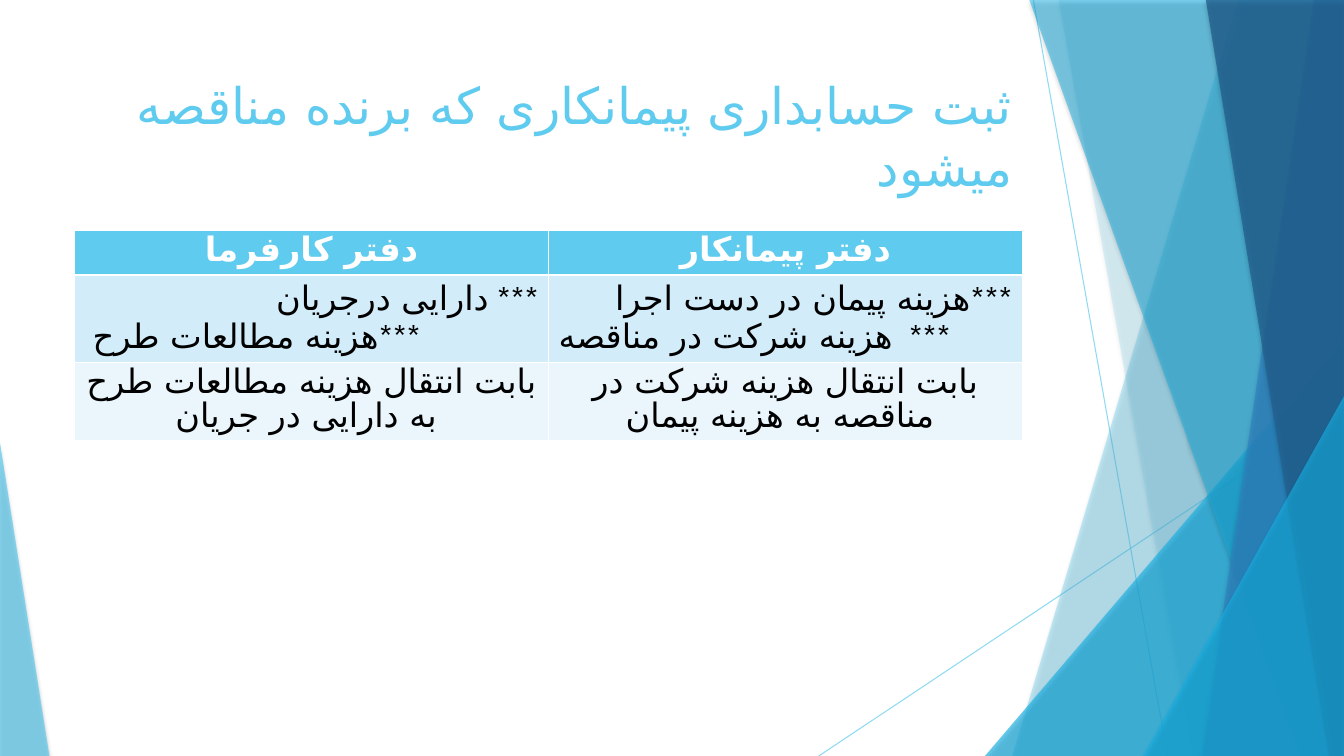
from lxml import etree
from pptx import Presentation
from pptx import util as u
from pptx.dml.color import RGBColor
from pptx.enum import shapes, text
from pptx.oxml.ns import qn

SKY, AZURE, BLACK, WHITE = "5FCBEF", "17B0E4", "000000", "FFFFFF"
LEFT, CENTER, RIGHT = text.PP_ALIGN.LEFT, text.PP_ALIGN.CENTER, text.PP_ALIGN.RIGHT
SCRIPT_FONTS = {"Arial": "DejaVu Sans", "Karla": "Karla"}

RIBBONS_BACK = [(92.12, 75.32, SKY, 36), (78.77, 88.75, SKY, 20)]
RIBBONS_FRONT = [(76.59, 96.85, AZURE, 50), (97.75, 89.42, "2E83C3", 70),
                 (89.72, 98.87, "226292", 80)]
HEADERS = ["دفتر کارفرما", "دفتر پیمانکار"]
ENTRIES = [
    [[("دارایی درجریان", "Arial"), (" ***", "Karla")],
     [(" ", "Karla"), ("هزینه مطالعات طرح", "Arial"), ("***", "Karla")]],
    [[("هزینه پیمان در دست اجرا", "Arial"), ("***", "Karla")],
     [("هزینه شرکت در مناقصه", "Arial"), ("  ***", "Karla")]],
]
REASONS = ["بابت انتقال هزینه مطالعات طرح به دارایی در جریان ",
           "بابت انتقال هزینه شرکت در مناقصه به هزینه پیمان "]


def rgb(color):
    """Turn a hex string into a colour."""
    return RGBColor.from_string(color)


def set_alpha(element, alpha):
    """Set the opacity in percent of the first colour in an element."""
    clr = next(element.iter(qn("a:srgbClr")))
    etree.SubElement(clr, qn("a:alpha"), val=str(alpha * 1000))


def point(box, x, y):
    """Turn percentages of a box into slide coordinates."""
    left, top, width, height = box
    return int(left + width * x / 100), int(top + height * y / 100)


def add_text(p, parts, size=24, color=BLACK, bold=False, align=CENTER, spacing=24.3):
    """Fill a paragraph with (text, font) parts in one format."""
    p.alignment, p.line_spacing = align, u.Pt(spacing)
    for words, font in parts:
        r = p.add_run()
        r.text = words
        r.font.name, r.font.size, r.font.bold = font, u.Pt(size), bold
        r.font.color.rgb = rgb(color)
        etree.SubElement(r._r.get_or_add_rPr(), qn("a:cs"), typeface=SCRIPT_FONTS[font])


def finish(sp, color, alpha):
    """Give a facet its translucent fill and soft shadow."""
    sp.fill.solid()
    sp.fill.fore_color.rgb = rgb(color)
    set_alpha(sp._element.spPr, alpha)
    sp.line.fill.background()
    sp.shadow.inherit = False
    effects = sp._element.spPr.find(qn("a:effectLst"))
    shadow = etree.SubElement(effects, qn("a:outerShdw"), blurRad=str(u.Pt(3)),
                              dist=str(u.Pt(2)), dir="5400000", rotWithShape="0")
    etree.SubElement(shadow, qn("a:srgbClr"), val=BLACK)
    set_alpha(shadow, 35)


def add_ray(s, box, start, end):
    """Draw a thin translucent line across the box."""
    line = s.shapes.add_connector(shapes.MSO_CONNECTOR.STRAIGHT,
                                  *point(box, *start), *point(box, *end))
    line.line.width = u.Pt(0.75)
    line.line.color.rgb = rgb(SKY)
    set_alpha(line._element.spPr, 70)
    etree.SubElement(line._element.spPr, qn("a:effectLst"))


def add_ribbon(s, box, top_x, bottom_x, color, alpha):
    """Draw a full-height facet from a slanted edge to the right side."""
    builder = s.shapes.build_freeform(*point(box, top_x, 0), scale=1.0)
    builder.add_line_segments([point(box, 100, 0), point(box, 100, 100),
                               point(box, bottom_x, 100)], close=True)
    finish(builder.convert_to_shape(), color, alpha)


def add_corner(s, box, x, y, right, tip, color, alpha):
    """Draw a right triangle standing on the bottom of the box."""
    left, top = point(box, x, y)
    end, bottom = point(box, right, 100)
    sp = s.shapes.add_shape(shapes.MSO_SHAPE.ISOSCELES_TRIANGLE,
                            left, top, end - left, bottom - top)
    sp.adjustments[0] = tip
    finish(sp, color, alpha)


def add_facets(s, box):
    """Draw the layered blue background."""
    add_ray(s, box, (76.89, 0), (86.87, 100))
    add_ray(s, box, (100, 53.73), (60.92, 100))
    for ribbon in RIBBONS_BACK:
        add_ribbon(s, box, *ribbon)
    add_corner(s, box, 73.29, 44.4, 100, 1, AZURE, 66)
    for ribbon in RIBBONS_FRONT:
        add_ribbon(s, box, *ribbon)
    add_corner(s, box, 85.07, 52.4, 100, 1, AZURE, 66)
    add_corner(s, box, 0, 58.53, 3.68, 0, SKY, 70)


def add_title(s, box):
    """Place the slide title."""
    tf = s.shapes.add_textbox(*box).text_frame
    tf.word_wrap = True
    tf.vertical_anchor = text.MSO_ANCHOR.TOP
    add_text(tf.paragraphs[0], [("ثبت حسابداری پیمانکاری که برنده مناقصه میشود", "Arial")],
             size=36, color=SKY, align=RIGHT, spacing=44.3)


def add_ledger(s, box):
    """Place the table of both parties' journal entries."""
    table = s.shapes.add_table(3, 2, *box).table
    for row, share, fill in zip(table.rows, (21, 42, 37), (SKY, "D2ECF9", "EAF6FC")):
        row.height = box[3] * share // 100
        for cell in row.cells:
            cell.fill.solid()
            cell.fill.fore_color.rgb = rgb(fill)
    for col, (header, entry, reason) in enumerate(zip(HEADERS, ENTRIES, REASONS)):
        add_text(table.cell(0, col).text_frame.paragraphs[0], [(header, "Arial")],
                 color=WHITE, bold=True)
        tf = table.cell(1, col).text_frame
        add_text(tf.paragraphs[0], entry[0], align=RIGHT, spacing=27.5)
        add_text(tf.add_paragraph(), entry[1], align=LEFT, spacing=27.5)
        add_text(table.cell(2, col).text_frame.paragraphs[0], [(reason, "Arial")])


def main():
    """Build the slide and save it."""
    prs = Presentation()
    prs.slide_width, prs.slide_height = u.Inches(13.33), u.Inches(7.5)
    s = prs.slides.add_slide(prs.slide_layouts[6])
    page = (0, 0, prs.slide_width, prs.slide_height)
    left, title_top = point(page, 5.55, 8.93)
    width, title_height = point(page, 70.52, 19.2)
    table_top, table_height = point(page, 0, 30.53)[1], point(page, 0, 27.6)[1]
    add_facets(s, page)
    add_title(s, (left, title_top, width, title_height))
    add_ledger(s, (left, table_top, width, table_height))
    prs.save("out.pptx")


if __name__ == "__main__":
    main()
